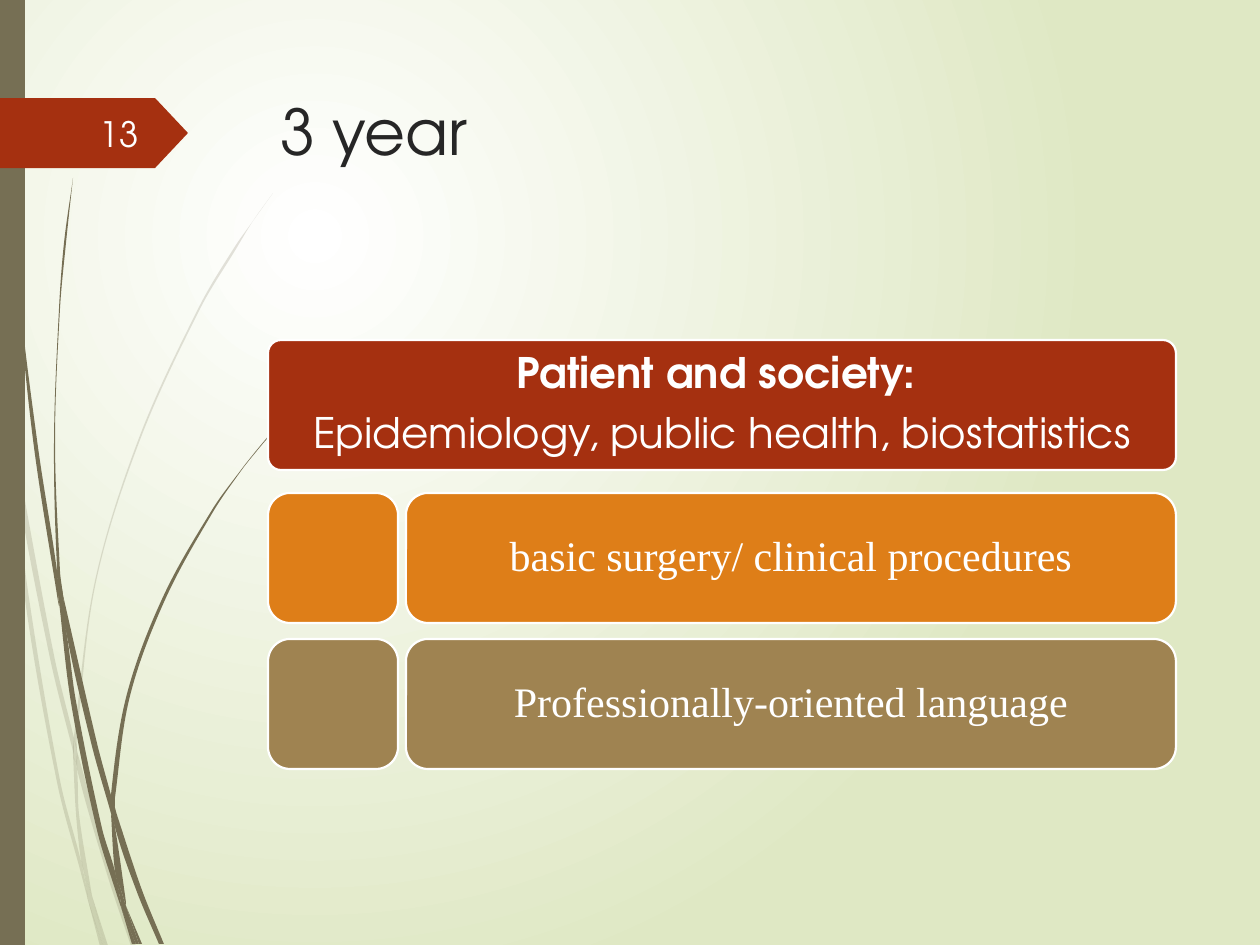
"""Builds the third-year curriculum slide with its subject cards and grass blades."""
from dataclasses import dataclass
from math import dist

from lxml.etree import SubElement
from pptx import Presentation
from pptx.dml.color import RGBColor
from pptx.enum.shapes import MSO_SHAPE
from pptx.enum.text import MSO_ANCHOR, PP_ALIGN
from pptx.oxml.ns import qn
from pptx.util import Pt


@dataclass(frozen=True)
class Theme:
    white: str = "FFFFFF"
    ink: str = "262626"
    meadow: str = "DFE8C4"
    stem: str = "766F54"
    red: str = "A53010"
    orange: str = "DE7E18"
    tan: str = "9F8351"
    sans: str = "TeX Gyre Adventor"
    serif: str = "Times New Roman"
    title_size: int = 36
    card_size: int = 24
    number_size: int = 20


THEME = Theme()
PX = 914400 / 126
SLIDE_SIZE = (1260, 945)
SIDEBAR = (0, 0, 25, 945)
TAG = (0, 98, 188, 70)
TITLE = ("3 year", (268, 86, 908, 176))
NUMBER = ("13", (70, 109, 81, 50))

HEADING = ["Patient and society: ", "Epidemiology, public health, biostatistics"]
SUBJECTS = [
    ("basic surgery/ clinical procedures", THEME.orange),
    ("Professionally-oriented language", THEME.tan),
]
CARD_LEFT, CARD_WIDTH, CARD_HEIGHT = 268, 908, 130
HEADING_TOP, SUBJECT_TOP, SUBJECT_STEP = 340, 493, 146
LABEL_OFFSET = 138

FAINT_BLADES = [
    ([(0, 377), (9, 433), (10, 441)], [(0, 355), (8, 406), (10, 441)]),
    ([(13, 435), (15, 474), (50, 658), (74, 755)], [(13, 435), (54, 655), (74, 738)]),
    ([(77, 751), (77, 769), (107, 874), (131, 946)],
     [(77, 751), (81, 765), (111, 872), (136, 946)]),
    ([(92, 896), (105, 946)], [(92, 896), (108, 946)]),
    ([(10, 441), (24, 592), (57, 782), (81, 873), (88, 900)],
     [(10, 441), (15, 474), (28, 591), (60, 780), (81, 861), (87, 891), (88, 900)]),
    ([(73, 755), (76, 814), (81, 861), (84, 872), (92, 896)],
     [(73, 755), (77, 769), (79, 814), (91, 890), (92, 896)]),
    ([(273, 193), (253, 221), (234, 248), (199, 307), (139, 438), (95, 581),
      (74, 736), (74, 738), (77, 751)],
     [(273, 193), (253, 221), (236, 249), (200, 309), (140, 440), (96, 582),
      (77, 736), (77, 751)]),
    ([(88, 900), (100, 946)], [(88, 900), (103, 946)]),
    ([(74, 738), (73, 755), (77, 766)], [(74, 738), (77, 751), (77, 769)]),
    ([(82, 861), (87, 891), (88, 900), (103, 946)],
     [(82, 861), (84, 872), (92, 896), (105, 946)]),
]
DARK_BLADES = [
    ([(3, 0), (4, 60), (6, 139), (18, 294), (34, 447), (58, 601), (59, 606)],
     [(4, 0), (5, 60), (8, 137), (19, 292), (38, 447), (57, 571), (59, 606)]),
    ([(63, 595), (67, 636), (92, 746), (111, 813)], [(63, 595), (97, 743), (111, 795)]),
    ([(115, 808), (115, 827), (137, 892), (159, 944)],
     [(115, 808), (118, 818), (142, 890), (164, 944)]),
    ([(59, 601), (71, 702), (97, 830), (116, 892), (122, 910)],
     [(59, 601), (67, 636), (76, 701), (102, 828), (115, 871), (121, 903), (122, 910)]),
    ([(73, 178), (64, 243), (59, 309), (54, 440), (57, 566), (62, 595)],
     [(73, 178), (66, 243), (60, 309), (55, 440), (60, 571), (63, 595)]),
    ([(126, 906), (139, 944)], [(126, 906), (142, 944)]),
    ([(57, 566), (57, 571), (59, 601), (67, 636)], [(57, 566), (63, 595), (67, 636)]),
    ([(271, 433), (256, 451), (241, 470), (212, 510), (163, 597), (127, 694),
      (111, 795), (115, 808)],
     [(272, 433), (256, 452), (241, 471), (213, 512), (165, 600), (130, 696),
      (115, 798), (115, 808)]),
    ([(122, 910), (132, 944)], [(122, 910), (136, 944)]),
    ([(111, 813), (115, 871), (121, 890), (126, 906)],
     [(111, 813), (115, 827), (126, 902), (126, 906)]),
    ([(111, 795), (111, 813), (115, 827)], [(111, 795), (115, 808), (115, 827)]),
    ([(115, 871), (121, 903), (122, 910), (136, 944)],
     [(115, 871), (121, 890), (126, 906), (139, 944)]),
]


def emu(*lengths):
    return [round(length * PX) for length in lengths]


def paint(shape, colour, alpha=None, outline=None):
    shape.shadow.inherit = False
    shape.fill.solid()
    shape.fill.fore_color.rgb = RGBColor.from_string(colour)
    if alpha is not None:
        tint = next(shape._element.spPr.iter(qn("a:srgbClr")))
        SubElement(tint, qn("a:alpha"), val=str(alpha * 1000))
    if outline:
        shape.line.color.rgb = RGBColor.from_string(outline)
        shape.line.width = Pt(1.25)
    else:
        shape.line.fill.background()


def add_block(slide, kind, box, colour, corner=None, outline=None):
    block = slide.shapes.add_shape(kind, *emu(*box))
    if corner is not None:
        block.adjustments[0] = corner
    paint(block, colour, outline=outline)
    return block


def write(shape, lines, font, size, colour, align, anchor):
    frame = shape.text_frame
    frame.word_wrap = True
    frame.vertical_anchor = anchor
    frame.text = "\n".join(lines)
    for paragraph in frame.paragraphs:
        paragraph.alignment = align
        paragraph.font.name = font
        paragraph.font.size = Pt(size)
        paragraph.font.color.rgb = RGBColor.from_string(colour)
    return frame.paragraphs


def write_card(card, lines, font):
    paragraphs = write(card, lines, font, THEME.card_size, THEME.white,
                       PP_ALIGN.CENTER, MSO_ANCHOR.MIDDLE)
    card.text_frame.margin_left = card.text_frame.margin_right = emu(6)[0]
    card.text_frame.margin_top = card.text_frame.margin_bottom = emu(4)[0]
    for paragraph in paragraphs:
        paragraph.line_spacing = 0.9
        paragraph.space_after = Pt(8.4)
    return paragraphs


def edge_handles(knots):
    ends = [knots[0], *knots, knots[-1]]
    for a, b, c, d in zip(ends, ends[1:], ends[2:], ends[3:]):
        third = dist(b, c) / 3
        leave = third / (dist(a, b) + dist(b, c))
        arrive = third / (dist(b, c) + dist(c, d))
        yield ([q + (r - p) * leave for p, q, r in zip(a, b, c)],
               [r - (s - q) * arrive for q, r, s in zip(b, c, d)])


def add_blade(slide, left, right, alpha=None):
    up = right[::-1]
    outline = [emu(*knot) for knot in left + up]
    handles = [*edge_handles(left), None, *edge_handles(up)]
    builder = slide.shapes.build_freeform(*outline[0])
    builder.add_line_segments(outline[1:], close=True)
    blade = builder.convert_to_shape()
    origin = (builder.shape_offset_x, builder.shape_offset_y)
    for segment, pair in zip(list(blade._element.iter(qn("a:lnTo"))), handles):
        if pair:
            segment.tag = qn("a:cubicBezTo")
            for index, handle in enumerate(pair):
                x, y = (value - start for value, start in zip(emu(*handle), origin))
                point = SubElement(segment, qn("a:pt"), x=str(x), y=str(y))
                segment.insert(index, point)
    paint(blade, THEME.stem, alpha)


def paint_background(slide):
    fill = slide.background.fill
    fill.gradient()
    for stop, colour in zip(fill.gradient_stops, (THEME.white, THEME.meadow)):
        stop.color.rgb = RGBColor.from_string(colour)
    gradient = next(slide._element.iter(qn("a:gradFill")))
    gradient.remove(gradient.find(qn("a:lin")))
    glow = SubElement(gradient, qn("a:path"), path="circle")
    SubElement(glow, qn("a:fillToRect"), l="50000", t="50000", r="100000", b="100000")


def add_cards(slide):
    def card(left, top, width, colour, corner):
        return add_block(slide, MSO_SHAPE.ROUNDED_RECTANGLE,
                         (left, top, width, CARD_HEIGHT), colour, corner, THEME.white)

    heading = card(CARD_LEFT, HEADING_TOP, CARD_WIDTH, THEME.red, 0.1)
    write_card(heading, HEADING, THEME.sans)[0].font.bold = True
    for row, (subject, colour) in enumerate(SUBJECTS):
        top = SUBJECT_TOP + row * SUBJECT_STEP
        card(CARD_LEFT, top, CARD_HEIGHT, colour, 0.17)
        label = card(CARD_LEFT + LABEL_OFFSET, top, CARD_WIDTH - LABEL_OFFSET, colour, 0.17)
        write_card(label, [subject], THEME.serif)


def main():
    deck = Presentation()
    deck.slide_width, deck.slide_height = emu(*SLIDE_SIZE)
    slide = deck.slides.add_slide(deck.slide_layouts[6])
    paint_background(slide)
    for blades, alpha in ((FAINT_BLADES, 20), (DARK_BLADES, None)):
        for left, right in blades:
            add_blade(slide, left, right, alpha)
    add_block(slide, MSO_SHAPE.RECTANGLE, SIDEBAR, THEME.stem)
    add_block(slide, MSO_SHAPE.PENTAGON, TAG, THEME.red, 0.47)
    for (words, box), size, colour, align, anchor in (
        (TITLE, THEME.title_size, THEME.ink, PP_ALIGN.LEFT, MSO_ANCHOR.TOP),
        (NUMBER, THEME.number_size, THEME.white, PP_ALIGN.RIGHT, MSO_ANCHOR.MIDDLE),
    ):
        holder = slide.shapes.add_textbox(*emu(*box))
        write(holder, [words], THEME.sans, size, colour, align, anchor)
    add_cards(slide)
    deck.save("out.pptx")


if __name__ == "__main__":
    main()
